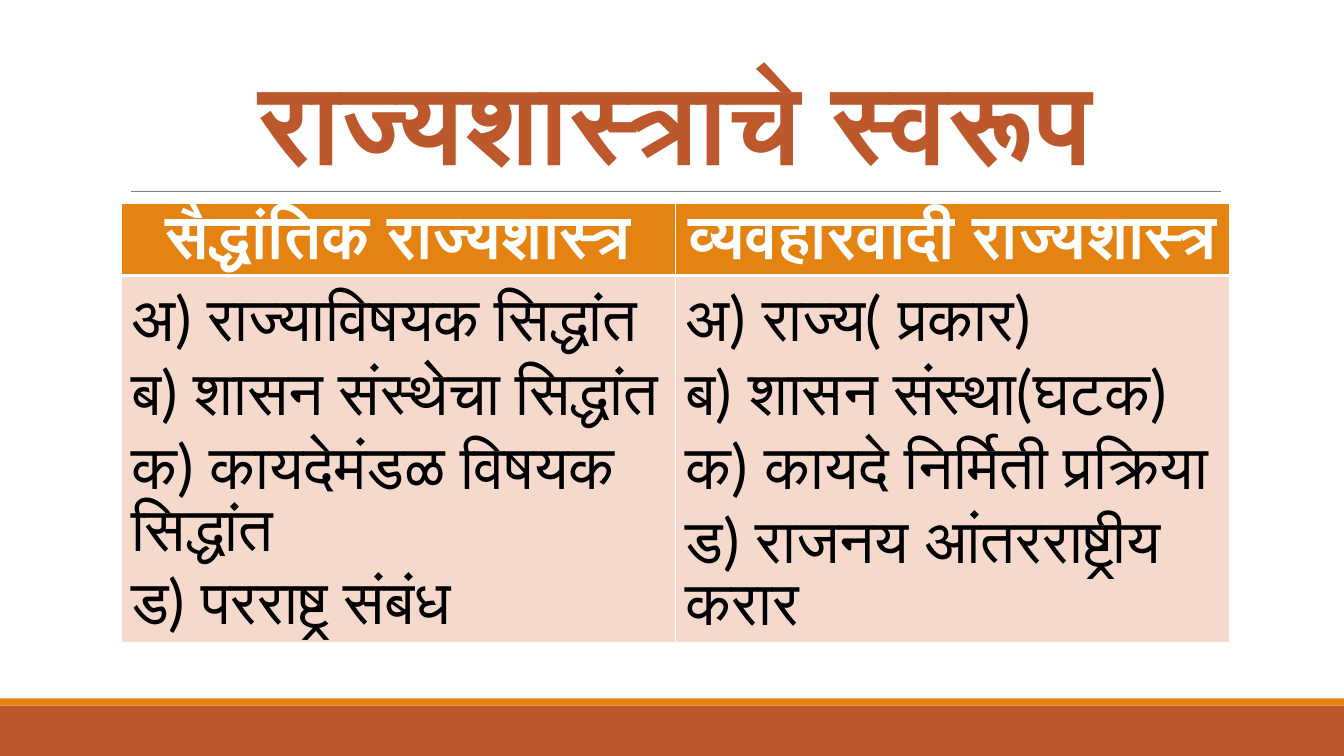
from pptx import Presentation, util as u
from pptx.dml.color import RGBColor
from pptx.enum import shapes, text
from pptx.oxml import parse_xml
from pptx.oxml.ns import nsdecls

RUST = RGBColor(0xBD, 0x58, 0x2C)
ORANGE = RGBColor(0xE4, 0x83, 0x12)
BLUSH = RGBColor(0xF5, 0xD9, 0xCC)
GRAY = RGBColor(0x80, 0x80, 0x80)
WHITE = RGBColor(0xFF, 0xFF, 0xFF)
BLACK = RGBColor(0, 0, 0)
FONT = "Lato"
WIDE, HIGH = u.Inches(13.33), u.Inches(7.5)

HEADS = ["सैद्धांतिक राज्यशास्त्र", "व्यवहारवादी राज्यशास्त्र"]
LISTS = [
    ["अ) राज्याविषयक सिद्धांत", "ब) शासन संस्थेचा सिद्धांत",
     "क) कायदेमंडळ विषयक सिद्धांत", "ड) परराष्ट्र संबंध"],
    ["अ) राज्य( प्रकार)", "ब) शासन संस्था(घटक)",
     "क) कायदे निर्मिती प्रक्रिया", "ड) राजनय आंतरराष्ट्रीय करार"],
]


def add_run(para, words, size, color, bold):
    run = para.add_run()
    run.text = words
    font = run.font
    font.name, font.size, font.bold = FONT, u.Pt(size), bold
    font.color.rgb = color
    return run


def add_band(slide, top, high, color):
    band = slide.shapes.add_shape(
        shapes.MSO_SHAPE.RECTANGLE, 0, top, WIDE, high)
    band.shadow.inherit = False
    band.fill.solid()
    band.fill.fore_color.rgb = color
    band.line.fill.background()


def add_foot(slide, top, high):
    # Thin stripe above a solid band
    thin = u.Inches(0.07)
    add_band(slide, top + thin, high - thin, RUST)
    add_band(slide, top, thin, ORANGE)


def add_title(slide, left, top, wide, high):
    title = slide.shapes.title
    title.left, title.top, title.width, title.height = left, top, wide, high
    frame = title.text_frame
    frame.word_wrap = True
    frame.auto_size = text.MSO_AUTO_SIZE.NONE
    frame.vertical_anchor = text.MSO_ANCHOR.BOTTOM
    para = frame.paragraphs[0]
    para.alignment = text.PP_ALIGN.CENTER
    para.line_spacing = 0.85
    run = add_run(para, "राज्यशास्त्राचे स्वरूप", 80, RUST, True)
    run.font._element.set("spc", "-50")
    # Rule under the title
    inset = u.Inches(0.1)
    base = top + high
    rule = slide.shapes.add_connector(
        shapes.MSO_CONNECTOR.STRAIGHT, left + inset, base,
        left + wide - inset + u.Inches(0.01), base)
    rule.line.color.rgb = GRAY
    rule.line.width = u.Pt(0.5)
    rule._element.spPr.append(parse_xml(f"<a:effectLst {nsdecls('a')}/>"))


def set_edges(cell, low):
    props = cell._tc.get_or_add_tcPr()
    edges = [("lnL", 1), ("lnR", 1), ("lnT", 1), ("lnB", low)]
    for spot, (tag, width) in enumerate(edges):
        props.insert(spot, parse_xml(
            f'<a:{tag} {nsdecls("a")} w="{u.Pt(width)}"><a:solidFill>'
            f'<a:srgbClr val="{WHITE}"/></a:solidFill></a:{tag}>'))


def fill_cell(cell, lines, back, color, bold, align, low):
    cell.fill.solid()
    cell.fill.fore_color.rgb = back
    set_edges(cell, low)
    frame = cell.text_frame
    for spot, words in enumerate(lines):
        para = frame.add_paragraph() if spot else frame.paragraphs[0]
        para.alignment = align
        add_run(para, words, 44, color, bold)


def add_grid(slide, left, top, wide, high):
    table = slide.shapes.add_table(2, 2, left, top, wide, high).table
    # Rows grow to hold their text
    for row in table.rows:
        row.height = u.Inches(0.41)
    for col, (head, items) in enumerate(zip(HEADS, LISTS)):
        fill_cell(table.cell(0, col), [head], ORANGE, WHITE, True,
                  text.PP_ALIGN.CENTER, 3)
        fill_cell(table.cell(1, col), items, BLUSH, BLACK, False,
                  text.PP_ALIGN.LEFT, 1)


def main():
    deck = Presentation()
    deck.slide_width, deck.slide_height = WIDE, HIGH
    slide = deck.slides.add_slide(deck.slide_layouts[5])
    left, wide = u.Inches(1.2), u.Inches(11)
    add_foot(slide, u.Inches(6.93), u.Inches(0.57))
    add_title(slide, left, u.Inches(0.31), wide, u.Inches(1.59))
    add_grid(slide, left, u.Inches(2.02), wide, u.Inches(3.87))
    deck.save("out.pptx")


if __name__ == "__main__":
    main()
